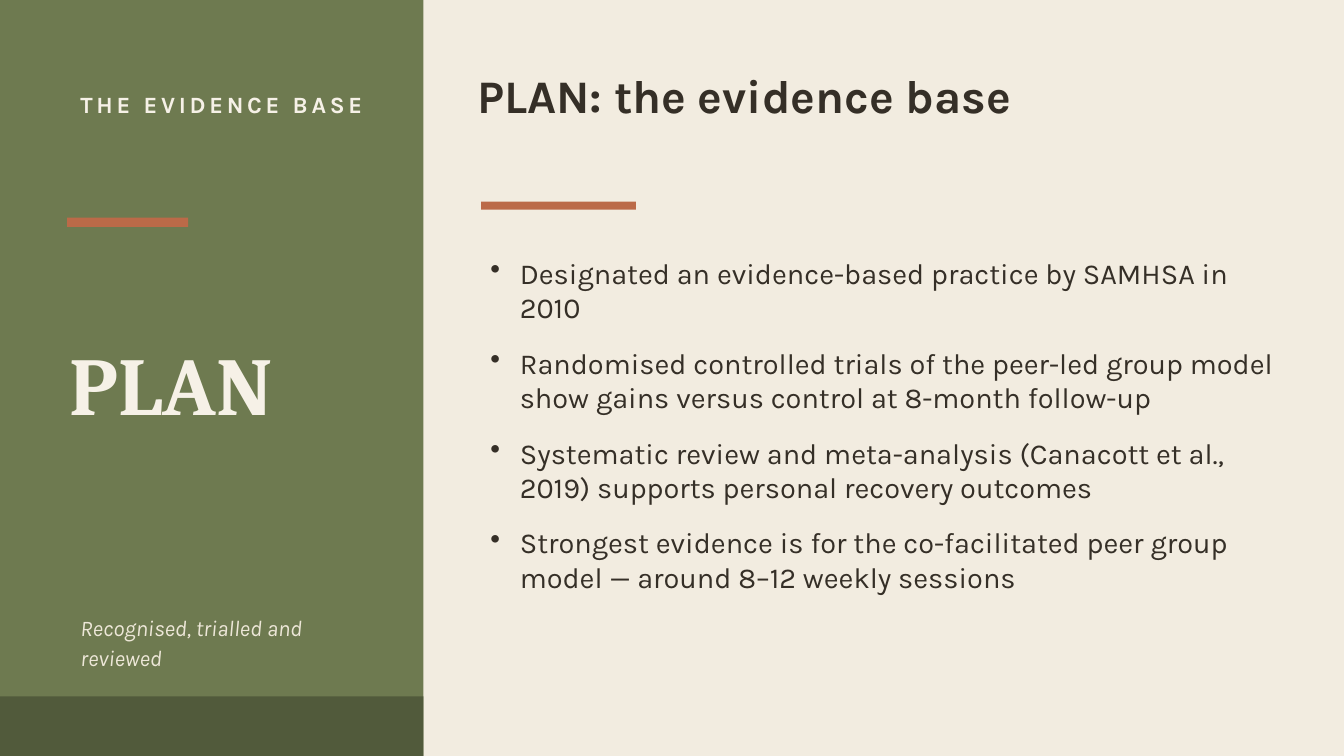
import pptx
import pptx.dml.color
import pptx.enum.shapes
import pptx.enum.text
import pptx.util
import lxml.etree

Pt = pptx.util.Pt
Anchor = pptx.enum.text.MSO_ANCHOR

COLORS = {
    "cream": "F2ECE0",
    "olive": "6E7A50",
    "dark_olive": "515A3B",
    "rust": "BB6A48",
    "light": "F6F1E7",
    "caption": "EDE7D8",
    "ink": "352F27",
}

EVIDENCE = [
    "Designated an evidence-based practice by SAMHSA in 2010",
    "Randomised controlled trials of the peer-led group model show gains "
    "versus control at 8-month follow-up",
    "Systematic review and meta-analysis (Canacott et al., 2019) supports "
    "personal recovery outcomes",
    "Strongest evidence is for the co-facilitated peer group model — around "
    "8–12 weekly sessions",
]


def rgb(name):
    return pptx.dml.color.RGBColor.from_string(COLORS[name])


def add_block(slide, left, top, width, height, color):
    shape = slide.shapes.add_shape(
        pptx.enum.shapes.MSO_SHAPE.RECTANGLE, Pt(left), Pt(top), Pt(width), Pt(height)
    )
    shape.shadow.inherit = False
    shape.fill.solid()
    shape.fill.fore_color.rgb = rgb(color)
    shape.line.fill.background()


def add_frame(slide, left, top, width, height, anchor=Anchor.TOP):
    shape = slide.shapes.add_textbox(Pt(left), Pt(top), Pt(width), Pt(height))
    frame = shape.text_frame
    frame.word_wrap = True
    frame.vertical_anchor = anchor
    return frame


def add_run(paragraph, text, size, color, font="Karla", bold=False, italic=False):
    run = paragraph.add_run()
    run.text = text
    run.font.size = Pt(size)
    run.font.name = font
    run.font.bold = bold
    run.font.italic = italic
    run.font.color.rgb = rgb(color)
    return run


def add_bullet(paragraph, indent):
    properties = paragraph._p.get_or_add_pPr()
    properties.set("marL", str(Pt(indent)))
    properties.set("indent", str(-Pt(indent)))
    for tag, name, value in (("a:buSzPct", "val", "100000"), ("a:buChar", "char", "•")):
        element = lxml.etree.SubElement(properties, pptx.oxml.ns.qn(tag))
        element.set(name, value)


def build_side_panel(slide, left, top, width, height):
    footer_height = 32
    margin = left + 36
    add_block(slide, left, top, width, height, "olive")
    add_block(slide, left, top + height - footer_height, width, footer_height, "dark_olive")
    add_block(slide, margin, top + 116.6, 64.8, 5, "rust")

    section = add_frame(slide, margin, top + 44.6, 172.8, 72).paragraphs[0]
    section.line_spacing = Pt(15)
    run = add_run(section, "THE EVIDENCE BASE", 12.5, "light", bold=True)
    run._r.get_or_add_rPr().set("spc", "200")

    topic = add_frame(slide, left + 30.2, top + 144, 183.6, 122.4, Anchor.MIDDLE).paragraphs[0]
    add_run(topic, "PLAN", 44, "light", font="Cambria", bold=True)

    caption = add_frame(slide, margin, top + 324, 169.2, 64.8).paragraphs[0]
    caption.line_spacing = Pt(16)
    add_run(caption, "Recognised, trialled and reviewed", 12, "caption", italic=True)


def build_evidence(slide, left, top, width, height):
    title = add_frame(slide, left, top, width, 72)
    title.margin_left = title.margin_top = title.margin_right = title.margin_bottom = 0
    add_run(title.paragraphs[0], "PLAN: the evidence base", 25, "ink", bold=True)

    add_block(slide, left + 2.2, top + 72, 82.8, 4.3, "rust")

    list_top = 97.2
    frame = add_frame(slide, left, top + list_top, width, height - list_top)
    for index, text in enumerate(EVIDENCE):
        paragraph = frame.add_paragraph() if index else frame.paragraphs[0]
        add_bullet(paragraph, 15.8)
        paragraph.space_after = Pt(11)
        add_run(paragraph, text, 15.5, "ink")


def main():
    presentation = pptx.Presentation()
    presentation.slide_width = Pt(720)
    presentation.slide_height = Pt(405)
    slide = presentation.slides.add_slide(presentation.slide_layouts[6])
    slide.background.fill.solid()
    slide.background.fill.fore_color.rgb = rgb("cream")
    build_side_panel(slide, 0, 0, 226.8, 405)
    build_evidence(slide, 255.6, 36, 435.6, 334.8)
    presentation.save("out.pptx")


if __name__ == "__main__":
    main()
